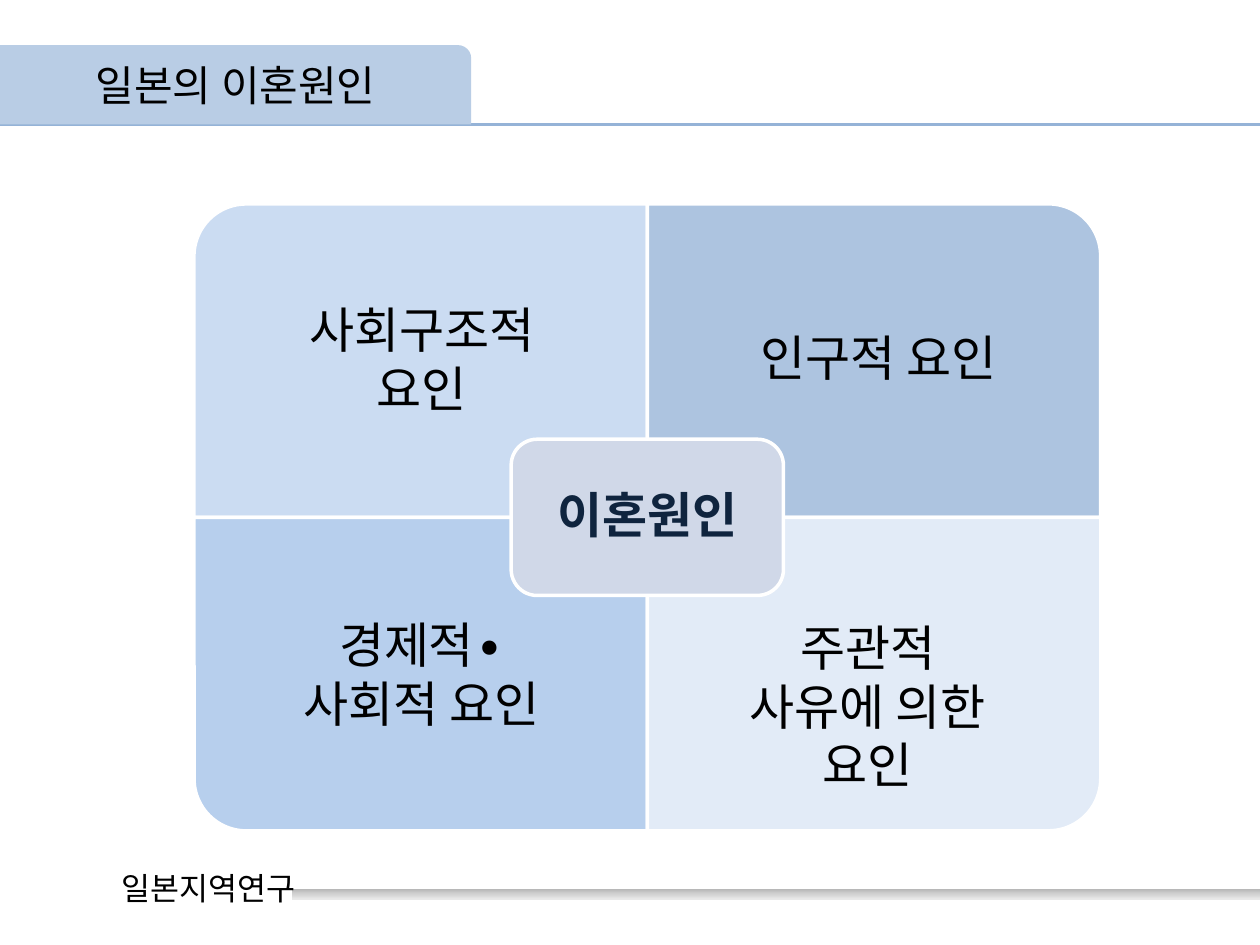
from copy import deepcopy
from dataclasses import dataclass

from lxml.etree import SubElement
from pptx import Presentation
from pptx.dml.color import RGBColor
from pptx.enum.shapes import MSO_CONNECTOR, MSO_SHAPE as Shp
from pptx.enum.text import MSO_ANCHOR as Anchor, MSO_AUTO_SIZE as Auto, PP_ALIGN as Align
from pptx.oxml.ns import qn
from pptx.util import Cm, Pt

FONT = "Noto Sans CJK KR"
COLORS = {
    "black": "000000", "white": "FFFFFF", "navy": "0F243E",
    "tab": "B9CDE5", "rule": "95B3D7", "center": "D0D8E8",
    "pale": "C6D9F1", "steel": "95B3D7", "sky": "8EB4E3",
}
BAR_STOPS = [(0, "B8B8B8"), (0.5, "D3D3D3"), (1, "E9E9E9")]
SLIDE_W, SLIDE_H = 25.4, 19.05
GRID_X, GRID_Y, CELL_W, CELL_H = 3.91, 4.11, 9.14, 6.32
CENTER_W, CENTER_H = 5.49, 3.15
RULE_Y = 2.51


@dataclass
class Cause:
    col: int
    row: int
    rotation: int
    color: str
    alpha: int
    text: str
    x: float
    y: float
    h: float


CAUSES = [
    Cause(0, 0, 270, "pale", 90, "사회구조적 요인", 5.51, 5.92, 2.64),
    Cause(1, 0, 0, "steel", 77, "인구적 요인", 14.71, 6.48, 1.45),
    Cause(0, 1, 180, "sky", 63, "경제적∙사회적 요인", 5.51, 12.27, 2.64),
    Cause(1, 1, 90, "pale", 50, "주관적 사유에 의한 요인", 14.5, 12.32, 2.64),
]


def rgb(name: str) -> RGBColor:
    return RGBColor.from_string(COLORS[name])


def write(sp, text: str, size: int, color: str = "black", bold: bool = False, **frame):
    tf = sp.text_frame
    for key, value in {"word_wrap": True, **frame}.items():
        setattr(tf, key, value)
    p = tf.paragraphs[0]
    p.alignment = Align.CENTER
    r = p.add_run()
    r.text = text
    for key, value in {"name": FONT, "size": Pt(size), "bold": bold}.items():
        setattr(r.font, key, value)
    r.font.color.rgb = rgb(color)
    SubElement(r.font._element, qn("a:ea"), typeface=FONT)
    return p


def add_shape(s, kind, x: float, y: float, w: float, h: float,
              fill: str | None = None, outlined: bool = False):
    sp = s.shapes.add_shape(kind, Cm(x), Cm(y), Cm(w), Cm(h))
    sp.shadow.inherit = False
    if fill:
        sp.fill.solid()
        sp.fill.fore_color.rgb = rgb(fill)
    else:
        sp.fill.background()
    if outlined:
        sp.line.color.rgb = rgb("white")
        sp.line.width = Pt(2)
    else:
        sp.line.fill.background()
    return sp


def add_quadrant(s, cause: Cause) -> None:
    cx = GRID_X + CELL_W * (cause.col + 0.5)
    cy = GRID_Y + CELL_H * (cause.row + 0.5)
    w, h = (CELL_H, CELL_W) if cause.rotation % 180 else (CELL_W, CELL_H)
    sp = add_shape(s, Shp.ROUND_1_RECTANGLE, cx - w / 2, cy - h / 2, w, h, cause.color, True)
    sp.rotation = cause.rotation
    clr = sp._element.spPr.find(qn("a:solidFill")).find(qn("a:srgbClr"))
    SubElement(clr, qn("a:alpha"), val=str(cause.alpha * 1000))


def add_cause_label(s, cause: Cause) -> None:
    box = s.shapes.add_textbox(Cm(cause.x), Cm(cause.y), Cm(5.99), Cm(cause.h))
    write(box, cause.text, 28, auto_size=Auto.SHAPE_TO_FIT_TEXT)


def add_footer(s) -> None:
    bar = add_shape(s, Shp.RECTANGLE, 5.89, 17.93, SLIDE_W - 5.89, 0.2)
    bar.fill.gradient()
    bar.fill.gradient_angle = 270
    stops = bar._element.spPr.find(".//" + qn("a:gsLst"))
    stops.insert(1, deepcopy(stops[0]))
    for stop, (position, color) in zip(bar.fill.gradient_stops, BAR_STOPS):
        stop.position = position
        stop.color.rgb = RGBColor.from_string(color)
    name = add_shape(s, Shp.ROUNDED_RECTANGLE, 1.9, 17.32, 4.6, 1.14)
    write(name, "일본지역연구", 18, vertical_anchor=Anchor.MIDDLE)


def add_header(s) -> None:
    rule = s.shapes.add_connector(MSO_CONNECTOR.STRAIGHT, 0, Cm(RULE_Y), Cm(SLIDE_W), Cm(RULE_Y))
    rule.line.color.rgb = rgb("rule")
    rule.line.width = Pt(1.5)
    SubElement(rule._element.spPr, qn("a:effectLst"))
    tab = add_shape(s, Shp.ROUND_1_RECTANGLE, 0, 0.91, 9.5, 1.6, "tab")
    title = s.shapes.title
    for key in ("left", "top", "width", "height"):
        setattr(title, key, getattr(tab, key))
    write(title, "일본의 이혼원인", 24, vertical_anchor=Anchor.MIDDLE, auto_size=Auto.NONE)
    tab._element.addnext(title._element)


def add_center(s) -> None:
    sp = add_shape(s, Shp.ROUNDED_RECTANGLE, GRID_X + CELL_W - CENTER_W / 2,
                   GRID_Y + CELL_H - CENTER_H / 2, CENTER_W, CENTER_H, "center", True)
    margins = {f"margin_{side}": Cm(0.3) for side in ("left", "right", "top", "bottom")}
    p = write(sp, "이혼원인", 28, "navy", True, vertical_anchor=Anchor.MIDDLE, **margins)
    p.line_spacing = 0.9


def main() -> None:
    prs = Presentation()
    prs.slide_width, prs.slide_height = Cm(SLIDE_W), Cm(SLIDE_H)
    s = prs.slides.add_slide(prs.slide_layouts[5])
    add_footer(s)
    add_header(s)
    for cause in CAUSES:
        add_quadrant(s, cause)
    add_center(s)
    for cause in CAUSES:
        add_cause_label(s, cause)
    prs.save("out.pptx")


if __name__ == "__main__":
    main()
